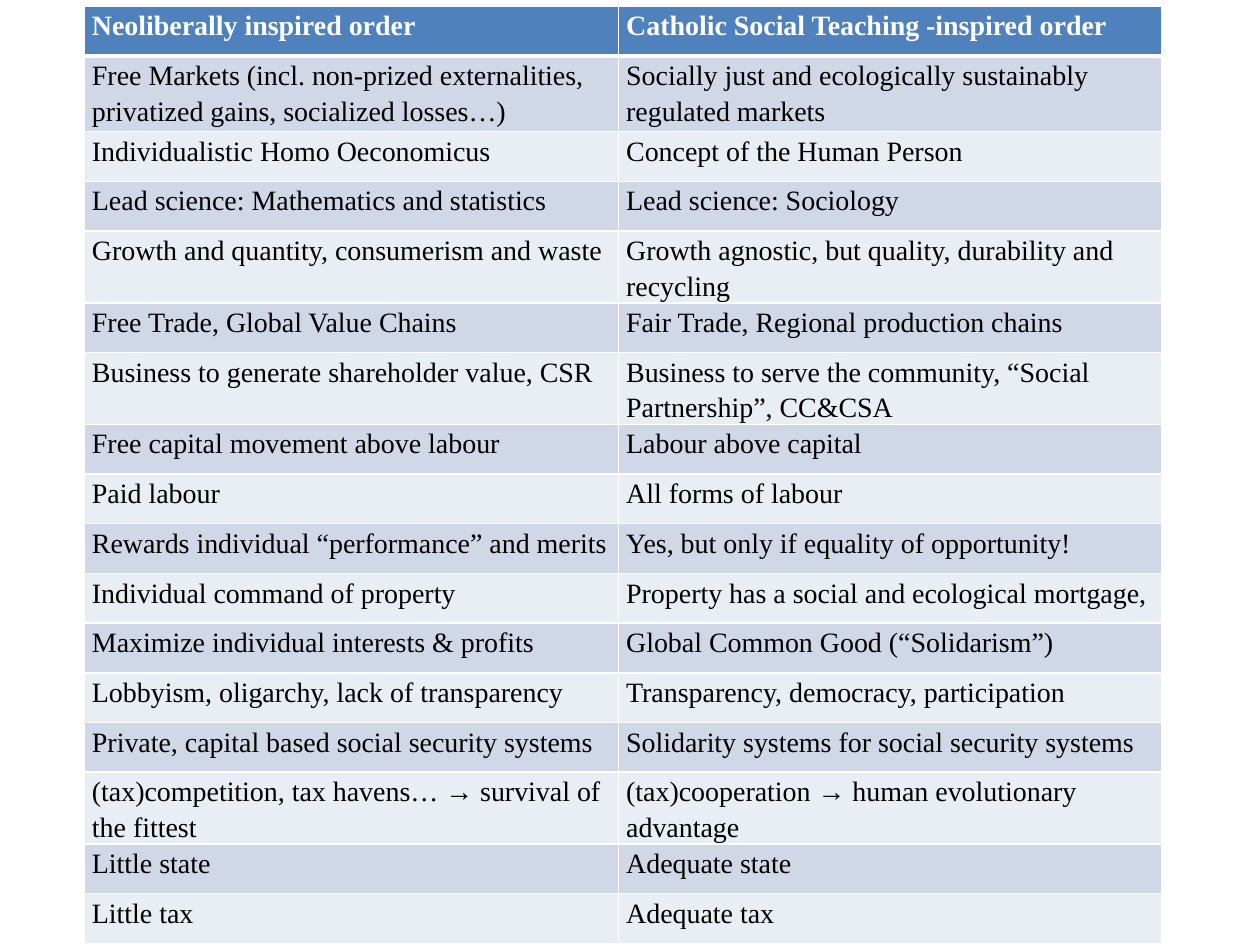
from dataclasses import dataclass

from lxml import etree
from pptx import Presentation
from pptx import util as u
from pptx.dml.color import RGBColor
from pptx.oxml.ns import qn


@dataclass(frozen=True)
class Theme:
    font: str = "Times New Roman"
    size: int = 16
    line_spacing: float = 1.15
    header_text: str = "FFFFFF"
    body_text: str = "000000"
    header_fill: str = "4F81BD"
    bands: tuple = ("D0D8E8", "E9EDF4")
    border: str = "FFFFFF"


THEME = Theme()
LEFT, TOP, TABLE_HEIGHT = 0.67, 0.05, 7.44
COLUMN_WIDTHS = (4.24, 4.31)
TALL_ROWS = {1: 0.6, 4: 0.57, 6: 0.57, 14: 0.57}  # rows with two lines

ORDERS = [
    ("Neoliberally inspired order", "Catholic Social Teaching -inspired order"),
    ("Free Markets (incl. non-prized externalities, privatized gains, socialized losses…)",
     "Socially just and ecologically sustainably regulated markets"),
    ("Individualistic Homo Oeconomicus", "Concept of the Human Person"),
    ("Lead science: Mathematics and statistics", "Lead science: Sociology"),
    ("Growth and quantity, consumerism and waste",
     "Growth agnostic, but quality, durability and recycling"),
    ("Free Trade, Global Value Chains", "Fair Trade, Regional production chains"),
    ("Business to generate shareholder value, CSR",
     "Business to serve the community, “Social Partnership”, CC&CSA"),
    ("Free capital movement above labour", "Labour above capital"),
    ("Paid labour", "All forms of labour"),
    ("Rewards individual “performance” and merits",
     "Yes, but only if equality of opportunity!"),
    ("Individual command of property", "Property has a social and ecological mortgage,"),
    ("Maximize individual interests & profits", "Global Common Good (“Solidarism”)"),
    ("Lobbyism, oligarchy, lack of transparency", "Transparency, democracy, participation"),
    ("Private, capital based social security systems",
     "Solidarity systems for social security systems"),
    ("(tax)competition, tax havens… → survival of the fittest",
     "(tax)cooperation → human evolutionary advantage"),
    ("Little state", "Adequate state"),
    ("Little tax", "Adequate tax"),
]


def set_borders(cell, bottom):
    """Draw 1 pt borders, with the bottom one of the given width in points."""
    tc_pr = cell._tc.get_or_add_tcPr()
    widths = {"a:lnL": 1, "a:lnR": 1, "a:lnT": 1, "a:lnB": bottom}
    for i, (tag, width) in enumerate(widths.items()):
        ln = etree.Element(qn(tag), w=str(u.Pt(width)))
        fill = etree.SubElement(ln, qn("a:solidFill"))
        etree.SubElement(fill, qn("a:srgbClr"), val=THEME.border)
        tc_pr.insert(i, ln)  # borders come before the fill


def fill_cell(cell, label, fill, color, header):
    cell.margin_left = cell.margin_right = u.Inches(0.06)
    cell.margin_top = cell.margin_bottom = 0
    cell.fill.solid()
    cell.fill.fore_color.rgb = RGBColor.from_string(fill)
    p = cell.text_frame.paragraphs[0]
    p.line_spacing = THEME.line_spacing
    r = p.add_run()
    r.text = label
    r.font.name = THEME.font
    r.font.size = u.Pt(THEME.size)
    r.font.bold = header
    r.font.color.rgb = RGBColor.from_string(color)


def add_comparison(slide):
    frame = slide.shapes.add_table(
        len(ORDERS), len(COLUMN_WIDTHS), u.Inches(LEFT), u.Inches(TOP),
        u.Inches(sum(COLUMN_WIDTHS)), u.Inches(TABLE_HEIGHT))
    table = frame.table
    for column, width in zip(table.columns, COLUMN_WIDTHS):
        column.width = u.Inches(width)

    plain_rows = len(ORDERS) - len(TALL_ROWS)
    plain_height = (TABLE_HEIGHT - sum(TALL_ROWS.values())) / plain_rows
    for i, labels in enumerate(ORDERS):
        table.rows[i].height = u.Inches(TALL_ROWS.get(i, plain_height))
        header = i == 0
        fill = THEME.header_fill if header else THEME.bands[(i - 1) % 2]
        color = THEME.header_text if header else THEME.body_text
        for j, label in enumerate(labels):
            cell = table.cell(i, j)
            fill_cell(cell, label, fill, color, header)
            set_borders(cell, 3 if header else 1)


def main():
    prs = Presentation()
    prs.slide_width, prs.slide_height = u.Inches(10), u.Inches(7.5)
    slide = prs.slides.add_slide(prs.slide_layouts[6])
    add_comparison(slide)
    prs.save("out.pptx")


if __name__ == "__main__":
    main()
